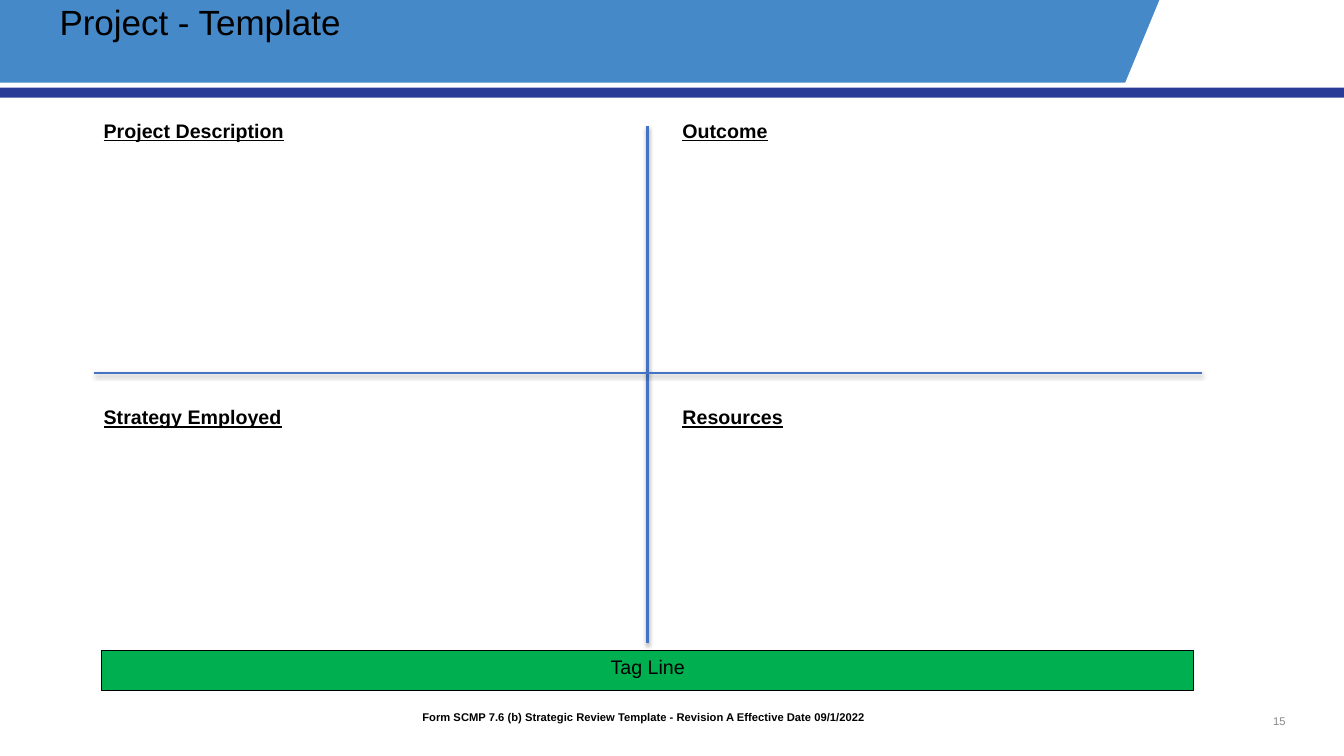
from lxml import etree
from pptx import Presentation
from pptx.dml.color import RGBColor
from pptx.enum.shapes import MSO_CONNECTOR as Line, MSO_SHAPE as Shape
from pptx.enum.text import MSO_ANCHOR as Anchor, PP_ALIGN as Align
from pptx.oxml import parse_xml
from pptx.oxml.ns import nsdecls
from pptx.util import Inches, Pt

WIDE, HIGH = 13.33, 7.5
TITLE = "Project - Template"
TAG = "Tag Line"
FORM = "Form SCMP 7.6 (b) Strategic Review Template - Revision A Effective Date 09/1/2022"
NUMBER = "15"
HEADS = [["Project Description", "Outcome"],
         ["Strategy Employed", "Resources"]]
COLS, ROWS = [0.93, 6.67], [1.13, 3.97]
AXES = [(6.42, 1.25, 6.42, 6.38), (0.93, 3.7, 11.92, 3.7)]
CORNER = [(11.5, 0), (WIDE, 0), (WIDE, 0.87), (11.14, 0.87)]
BLUE, NAVY, GREEN, AXIS = "4589C8", "2A3B97", "00B050", "4472C4"
WHITE, BLACK, GREY = "FFFFFF", "000000", "888888"
SHADOW = (f'<a:effectLst {nsdecls("a")}>'
          f'<a:outerShdw blurRad="{Pt(3.1)}" dist="{Pt(1.6)}" dir="5400000" rotWithShape="0">'
          '<a:srgbClr val="000000"><a:alpha val="38000"/></a:srgbClr>'
          '</a:outerShdw></a:effectLst>')

deck = Presentation()
deck.slide_width, deck.slide_height = Inches(WIDE), Inches(HIGH)
slide = deck.slides.add_slide(deck.slide_layouts[5])
shapes = slide.shapes


def color(code):
    return RGBColor.from_string(code)


def inches(*sizes):
    return [Inches(size) for size in sizes]


def write(shape, text, size=14, ink=BLACK, bold=False, under=False,
          align=Align.LEFT, anchor=Anchor.TOP, space=1.0):
    frame = shape.text_frame
    frame.word_wrap = True
    frame.vertical_anchor = anchor
    frame.margin_left = frame.margin_right = Inches(0.1)
    frame.margin_top = frame.margin_bottom = Inches(0.05)
    para = frame.paragraphs[0]
    para.alignment, para.line_spacing = align, space
    run = para.add_run()
    run.text = text
    font = run.font
    font.name, font.size, font.bold, font.underline = "Arial", Pt(size), bold, under
    font.color.rgb = color(ink)
    return para


def paint(shape, fill, edge=None):
    shape.shadow.inherit = False
    shape.fill.solid()
    shape.fill.fore_color.rgb = color(fill)
    if edge:
        shape.line.color.rgb = color(edge)
        shape.line.width = Pt(0.75)
    else:
        shape.line.fill.background()
    return shape


def block(box, fill, edge=None):
    return paint(shapes.add_shape(Shape.RECTANGLE, *inches(*box)), fill, edge)


def label(box, text, **style):
    return write(shapes.add_textbox(*inches(*box)), text, **style)


# Banner
block((0, 0, 13.19, 0.82), BLUE)
points = [inches(*point) for point in CORNER]
pen = shapes.build_freeform(*points[0])
pen.add_line_segments(points[1:], close=True)
paint(pen.convert_to_shape(), WHITE)
block((0, 0.87, WIDE, 0.1), NAVY)

# Title, brought in front of the banner
title = shapes.title
title.left, title.top, title.width, title.height = inches(0.49, 0, 9.49, 0.95)
write(title, TITLE, size=25, space=0.9)
title.element.getparent().append(title.element)

# Quadrants
for axis in AXES:
    line = shapes.add_connector(Line.STRAIGHT, *inches(*axis))
    line.line.color.rgb = color(AXIS)
    line.line.width = Pt(2)
    line.element.spPr.append(parse_xml(SHADOW))
for top, heads in zip(ROWS, HEADS):
    for left, head in zip(COLS, heads):
        label((left, top, 5.4, 2.22), head, bold=True, under=True)

# Foot
write(block((1.01, 6.45, 10.83, 0.4), GREEN, BLACK), TAG, align=Align.CENTER)
form = label((3.84, 7.01, 5.28, 0.38), FORM, size=8, bold=True, space=0.9)
props = form._p.get_or_add_pPr()
props.set("marL", str(Inches(0.5)))
props.set("indent", str(Inches(-0.25)))
label((9.74, 6.95, 3.11, 0.4), NUMBER, size=8, ink=GREY,
      align=Align.RIGHT, anchor=Anchor.MIDDLE)

deck.save("out.pptx")
